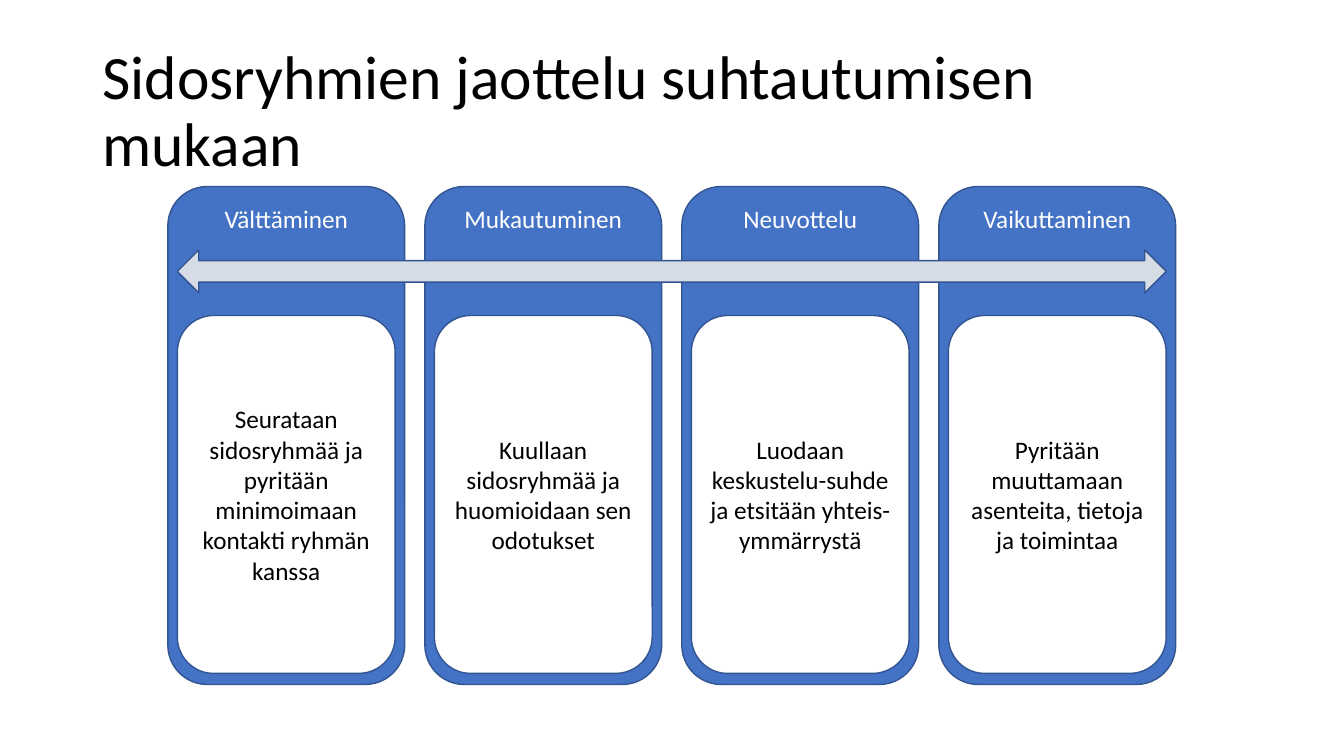
import pptx
import pptx.util
import pptx.dml.color
import pptx.enum.shapes
import pptx.enum.text

Cm = pptx.util.Cm
RGBColor = pptx.dml.color.RGBColor
Shapes = pptx.enum.shapes.MSO_SHAPE
Anchor = pptx.enum.text.MSO_ANCHOR
Align = pptx.enum.text.PP_ALIGN

BLACK = RGBColor(0x00, 0x00, 0x00)
WHITE = RGBColor(0xFF, 0xFF, 0xFF)
BLUE = RGBColor(0x44, 0x72, 0xC4)
OUTLINE = RGBColor(0x32, 0x54, 0x91)
ARROW_GREY = RGBColor(0xD6, 0xDC, 0xE5)

TITLE = "Sidosryhmien jaottelu suhtautumisen mukaan"
APPROACHES = [
    ("Välttäminen", "Seurataan sidosryhmää ja pyritään minimoimaan kontakti ryhmän kanssa"),
    ("Mukautuminen", "Kuullaan sidosryhmää ja huomioidaan sen odotukset"),
    ("Neuvottelu", "Luodaan keskustelu-suhde ja etsitään yhteis-ymmärrystä"),
    ("Vaikuttaminen", "Pyritään muuttamaan asenteita, tietoja ja toimintaa"),
]

CARD_WIDTH = 5.97
SIDE_INSET = 0.24


def apply_format(target, values):
    for name, value in values.items():
        setattr(target, name, value)


def write_text(shape, text, size, color, anchor, alignment, line_spacing=None, margin=0.25):
    frame = shape.text_frame
    apply_format(frame, {"word_wrap": True, "vertical_anchor": anchor,
                         "margin_left": Cm(margin), "margin_right": Cm(margin)})
    paragraph = frame.paragraphs[0]
    apply_format(paragraph, {"alignment": alignment, "line_spacing": line_spacing})
    run = paragraph.add_run()
    run.text = text
    apply_format(run.font, {"name": "Calibri", "size": pptx.util.Pt(size)})
    run.font.color.rgb = color


def add_outlined_shape(slide, kind, left, top, width, height, fill):
    shape = slide.shapes.add_shape(kind, Cm(left), Cm(top), Cm(width), Cm(height))
    shape.shadow.inherit = False
    shape.fill.solid()
    shape.fill.fore_color.rgb = fill
    shape.line.color.rgb = OUTLINE
    shape.line.width = pptx.util.Pt(1)
    return shape


def add_title(slide, left, top, width, height):
    box = slide.shapes.add_textbox(Cm(left), Cm(top), Cm(width), Cm(height))
    write_text(box, TITLE, 44, BLACK, Anchor.MIDDLE, Align.LEFT, line_spacing=0.9)


def add_card(slide, left, top, width, height, heading, description):
    # Blue card with its heading
    card = add_outlined_shape(slide, Shapes.ROUNDED_RECTANGLE, left, top, width, height, BLUE)
    write_text(card, heading, 18, WHITE, Anchor.TOP, Align.CENTER)
    # White panel with the description
    panel = add_outlined_shape(slide, Shapes.ROUNDED_RECTANGLE, left + SIDE_INSET, top + 3.25,
                               width - 2 * SIDE_INSET, height - 3.53, WHITE)
    write_text(panel, description, 18, BLACK, Anchor.MIDDLE, Align.CENTER, margin=0.2)


def add_spectrum(slide, left, top, width, height):
    # Cards spread evenly over the width
    step = (width - CARD_WIDTH) / (len(APPROACHES) - 1)
    for index, (heading, description) in enumerate(APPROACHES):
        add_card(slide, left + index * step, top, CARD_WIDTH, height, heading, description)
    # Arrow across all cards
    add_outlined_shape(slide, Shapes.LEFT_RIGHT_ARROW, left + SIDE_INSET, top + 1.6,
                       width - 2 * SIDE_INSET, 1.08, ARROW_GREY)


def main():
    presentation = pptx.Presentation()
    apply_format(presentation, {"slide_width": Cm(33.87), "slide_height": Cm(19.05)})
    slide = presentation.slides.add_slide(presentation.slide_layouts[6])
    add_spectrum(slide, 4.23, 4.7, 25.4, 12.55)
    add_title(slide, 2.33, 1.01, 29.21, 3.68)
    presentation.save("out.pptx")


if __name__ == "__main__":
    main()
